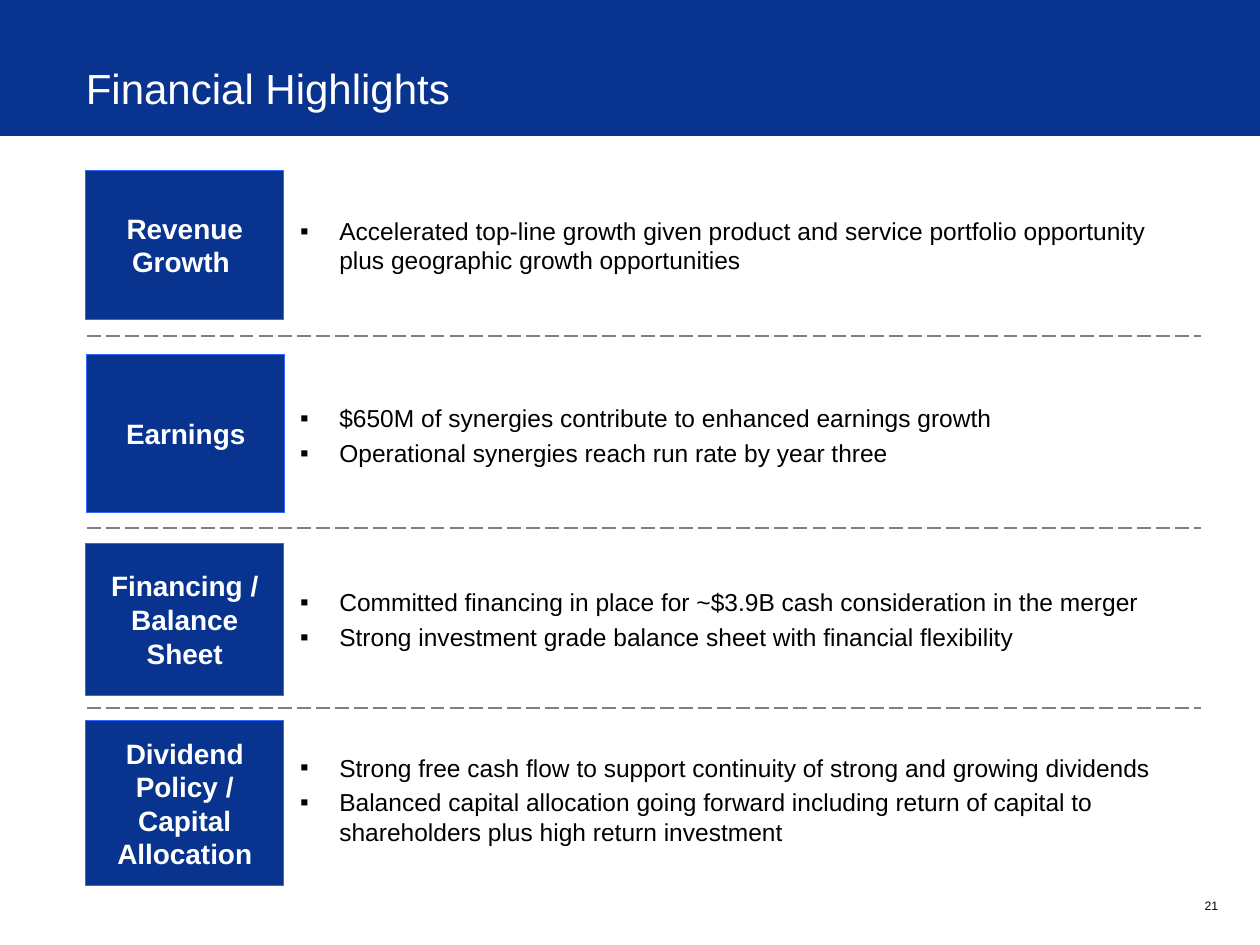
from lxml import etree
from pptx import Presentation
from pptx import util as u
from pptx.dml.color import RGBColor
from pptx.enum import dml, shapes, text
from pptx.oxml import ns

COLORS = {"blue": "08338F", "edge": "3366FF", "gray": "808080",
          "white": "FFFFFF", "black": "000000"}
ROWS = [
    ("Revenue Growth ", 1.73, 3.43, 3.02, 4.22, 1.45, [
        "Accelerated top-line growth given product and service portfolio "
        "opportunity plus geographic growth opportunities"]),
    ("Earnings", 1.75, 7.14, 3.2, 8.0, 1.55, [
        "$650M of synergies contribute to enhanced earnings growth",
        "Operational synergies reach run rate by year three"]),
    ("Financing / Balance Sheet", 1.73, 10.95, 3.07, 11.71, 1.55, [
        "Committed financing in place for ~$3.9B cash consideration in the merger",
        "Strong investment grade balance sheet with financial flexibility"]),
    ("Dividend Policy / Capital Allocation", 1.73, 14.53, 3.33, 15.04, 2.16, [
        "Strong free cash flow to support continuity of strong and growing dividends",
        "Balanced capital allocation going forward including return of capital "
        "to shareholders plus high return investment"]),
]


def add_span(para, words, size, color, bold=False):
    span = para.add_run()
    span.text = words
    span.font.name = "Arial"
    span.font.size = u.Pt(size)
    span.font.bold = bold
    span.font.color.rgb = RGBColor.from_string(COLORS[color])


def set_frame(box, left, top, width, height, anchor, insets):
    box.left, box.top, box.width, box.height = map(u.Cm, (left, top, width, height))
    frame = box.text_frame
    frame.word_wrap = True
    frame.auto_size = text.MSO_AUTO_SIZE.NONE
    frame.vertical_anchor = anchor
    (frame.margin_left, frame.margin_top,
     frame.margin_right, frame.margin_bottom) = map(u.Cm, insets)
    return frame


deck = Presentation()
deck.slide_width, deck.slide_height = u.Cm(25.4), u.Cm(19.05)
page = deck.slides.add_slide(deck.slide_layouts.get_by_name("Comparison"))
title, *lists = page.placeholders

band = page.shapes.add_shape(shapes.MSO_SHAPE.RECTANGLE, 0, 0, deck.slide_width, u.Cm(2.74))
band.shadow.inherit = False
band.fill.solid()
band.fill.fore_color.rgb = RGBColor.from_string(COLORS["blue"])
band.line.fill.background()
page.shapes._spTree.insert(2, band._element)

frame = set_frame(title, 1.73, 1.27, 22.43, 1.14, text.MSO_ANCHOR.BOTTOM, (0, 0, 0, 0.13))
para = frame.paragraphs[0]
para.alignment = text.PP_ALIGN.LEFT
add_span(para, "Financial Highlights", 24, "white")

for y in (6.78, 10.64, 14.27):
    divider = page.shapes.add_connector(
        shapes.MSO_CONNECTOR.STRAIGHT, u.Cm(1.75), u.Cm(y), u.Cm(24.21), u.Cm(y))
    divider.line.color.rgb = RGBColor.from_string(COLORS["gray"])
    divider.line.width = u.Pt(1)
    divider.line.dash_style = dml.MSO_LINE.LONG_DASH
    etree.SubElement(divider._element.spPr, ns.qn("a:effectLst"))

for body, (label, left, top, height, list_top, list_height, points) in zip(lists, ROWS):
    box = page.shapes.add_shape(shapes.MSO_SHAPE.RECTANGLE, 0, 0, 0, 0)
    box.shadow.inherit = False
    box.fill.solid()
    box.fill.fore_color.rgb = RGBColor.from_string(COLORS["blue"])
    box.line.color.rgb = RGBColor.from_string(COLORS["edge"])
    box.line.width = u.Pt(0.5)
    frame = set_frame(box, left, top, 3.99, height,
                      text.MSO_ANCHOR.MIDDLE, (0.25, 0.13, 0.25, 0.13))
    para = frame.paragraphs[0]
    para.alignment = text.PP_ALIGN.CENTER
    add_span(para, label, 16, "white", bold=True)

    frame = set_frame(body, 5.92, list_top, 18.21, list_height,
                      text.MSO_ANCHOR.TOP, [0.13] * 4)
    frame.auto_size = text.MSO_AUTO_SIZE.SHAPE_TO_FIT_TEXT
    for index, point in enumerate(points):
        para = frame.add_paragraph() if index else frame.paragraphs[0]
        para.space_before = u.Pt(3)
        props = para._p.get_or_add_pPr()
        props.set("marL", str(u.Cm(0.79)))
        props.set("indent", str(-u.Cm(0.79)))
        etree.SubElement(props, ns.qn("a:buFont"), typeface="Arial")
        etree.SubElement(props, ns.qn("a:buChar"), char="▪")
        add_span(para, point, 14, "black")

number = page.shapes.add_textbox(0, 0, 0, 0)
frame = set_frame(number, 23.42, 17.37, 1.14, 1.04, text.MSO_ANCHOR.BOTTOM, [0] * 4)
frame.word_wrap = False
para = frame.paragraphs[0]
para.alignment = text.PP_ALIGN.RIGHT
add_span(para, "21", 7, "black")

deck.save("out.pptx")
